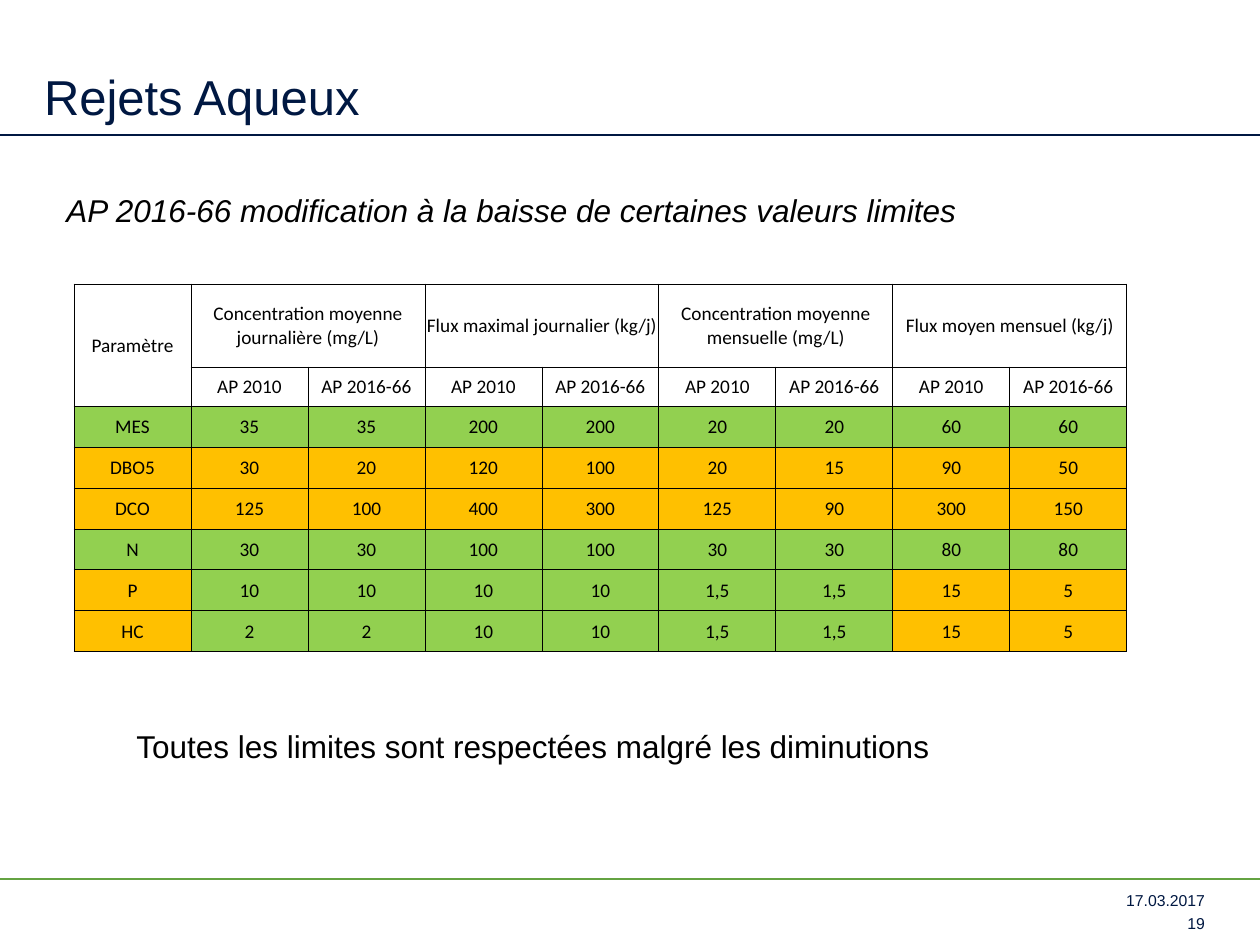
from pptx import Presentation
from pptx import util as u
from pptx.dml.color import RGBColor
from pptx.enum import shapes, text
from pptx.oxml import parse_xml
from pptx.oxml.ns import nsdecls, qn

EMU_PER_PX = 914400 / 126
NAVY, GREEN, BLACK = "001842", "64A342", "000000"
UNCHANGED, LOWERED = "92D050", "FFC000"

LIMIT_TYPES = [
    "Concentration moyenne journalière (mg/L)",
    "Flux maximal journalier (kg/j)",
    "Concentration moyenne mensuelle (mg/L)",
    "Flux moyen mensuel (kg/j)",
]
ORDERS = ["AP 2010", "AP 2016-66"]
LIMITS = {
    "MES": ["35", "35", "200", "200", "20", "20", "60", "60"],
    "DBO5": ["30", "20", "120", "100", "20", "15", "90", "50"],
    "DCO": ["125", "100", "400", "300", "125", "90", "300", "150"],
    "N": ["30", "30", "100", "100", "30", "30", "80", "80"],
    "P": ["10", "10", "10", "10", "1,5", "1,5", "15", "5"],
    "HC": ["2", "2", "10", "10", "1,5", "1,5", "15", "5"],
}


def px(length):
    return u.Emu(round(length * EMU_PER_PX))


def rgb(color):
    return RGBColor.from_string(color)


def write(frame, words, size, color, align=text.PP_ALIGN.LEFT, face="Arial", italic=False):
    frame.text = words
    paragraph = frame.paragraphs[0]
    paragraph.alignment = align
    font = paragraph.font
    font.name, font.size, font.italic = face, u.Pt(size), italic
    font.color.rgb = rgb(color)


def tighten(frame):
    frame.margin_left = frame.margin_right = frame.margin_top = frame.margin_bottom = 0
    frame.vertical_anchor = text.MSO_ANCHOR.BOTTOM
    frame.auto_size = text.MSO_AUTO_SIZE.NONE
    frame.word_wrap = True


def add_rule(slide, y, width, color):
    rule = slide.shapes.add_connector(
        shapes.MSO_CONNECTOR.STRAIGHT, 0, px(y), px(width), px(y))
    rule.line.color.rgb = rgb(color)
    rule.line.width = u.Pt(1.5)
    rule._element.spPr.append(parse_xml(f"<a:effectLst {nsdecls('a')}/>"))


def add_heading(slide, left, top, width, height):
    add_rule(slide, top + height + 10, 1260, NAVY)
    title = slide.shapes.title
    title.left, title.top, title.width, title.height = map(px, (left, top, width, height))
    tighten(title.text_frame)
    write(title.text_frame, "Rejets Aqueux", 28, NAVY)


def add_footer(slide, left, top, width, height):
    add_rule(slide, top, 1260, GREEN)
    for offset, words in ((10, "17.03.2017"), (33, "19")):
        entry = slide.shapes.add_textbox(px(left), px(top + offset), px(width), px(height))
        tighten(entry.text_frame)
        write(entry.text_frame, words, 9, NAVY, text.PP_ALIGN.RIGHT)


def add_statement(slide, left, top, width, height, words, italic=False):
    statement = slide.shapes.add_textbox(*map(px, (left, top, width, height)))
    statement.text_frame.word_wrap = True
    statement.text_frame.auto_size = text.MSO_AUTO_SIZE.SHAPE_TO_FIT_TEXT
    write(statement.text_frame, words, 18, BLACK, italic=italic)


def format_cell(cell, words, color=None):
    write(cell.text_frame, words, 11, BLACK, text.PP_ALIGN.CENTER, "Calibri")
    cell.vertical_anchor = text.MSO_ANCHOR.MIDDLE
    cell.margin_left = cell.margin_right = cell.margin_top = px(1)
    cell.margin_bottom = 0
    properties = cell._tc.get_or_add_tcPr()
    for side in ("lnL", "lnR", "lnT", "lnB"):
        properties.append(parse_xml(
            f'<a:{side} {nsdecls("a")} w="{u.Pt(0.5)}"><a:solidFill>'
            f'<a:srgbClr val="{BLACK}"/></a:solidFill></a:{side}>'))
    if color:
        cell.fill.solid()
        cell.fill.fore_color.rgb = rgb(color)
    else:
        cell.fill.background()


def add_limits_table(slide, left, top, column_width):
    heights = [83, 39] + [41] * len(LIMITS)
    columns = 1 + len(LIMIT_TYPES) * len(ORDERS)
    table = slide.shapes.add_table(
        len(heights), columns, px(left), px(top),
        px(columns * column_width), px(sum(heights))).table
    table.first_row = table.horz_banding = False
    for column in table.columns:
        column.width = px(column_width)
    for row, height in zip(table.rows, heights):
        row.height = px(height)

    types = [words for name in LIMIT_TYPES for words in (name, "")]
    for column, words in enumerate(["Paramètre"] + types):
        format_cell(table.cell(0, column), words)
    for column, words in enumerate([""] + ORDERS * len(LIMIT_TYPES)):
        format_cell(table.cell(1, column), words)
    table.cell(0, 0).merge(table.cell(1, 0))
    for column in range(1, columns, 2):
        table.cell(0, column).merge(table.cell(0, column + 1))

    for row, (parameter, values) in enumerate(LIMITS.items(), 2):
        colors = [UNCHANGED if before == after else LOWERED
                  for before, after in zip(values[::2], values[1::2])]
        format_cell(table.cell(row, 0), parameter,
                    LOWERED if LOWERED in colors else UNCHANGED)
        for index, value in enumerate(values):
            format_cell(table.cell(row, index + 1), value, colors[index // 2])


def main():
    deck = Presentation()
    deck.slide_width, deck.slide_height = px(1260), px(945)
    slide = deck.slides.add_slide(deck.slide_layouts[5])
    add_heading(slide, 44, 16, 1160, 109)
    add_footer(slide, 1081, 879, 124, 21)
    add_statement(slide, 54, 185, 1160, 50,
                  "AP 2016-66 modification à la baisse de certaines valeurs limites", True)
    add_limits_table(slide, 74, 284, 117)
    add_statement(slide, 124, 721, 973, 50,
                  "Toutes les limites sont respectées malgré les diminutions")
    deck.save("out.pptx")


if __name__ == "__main__":
    main()
